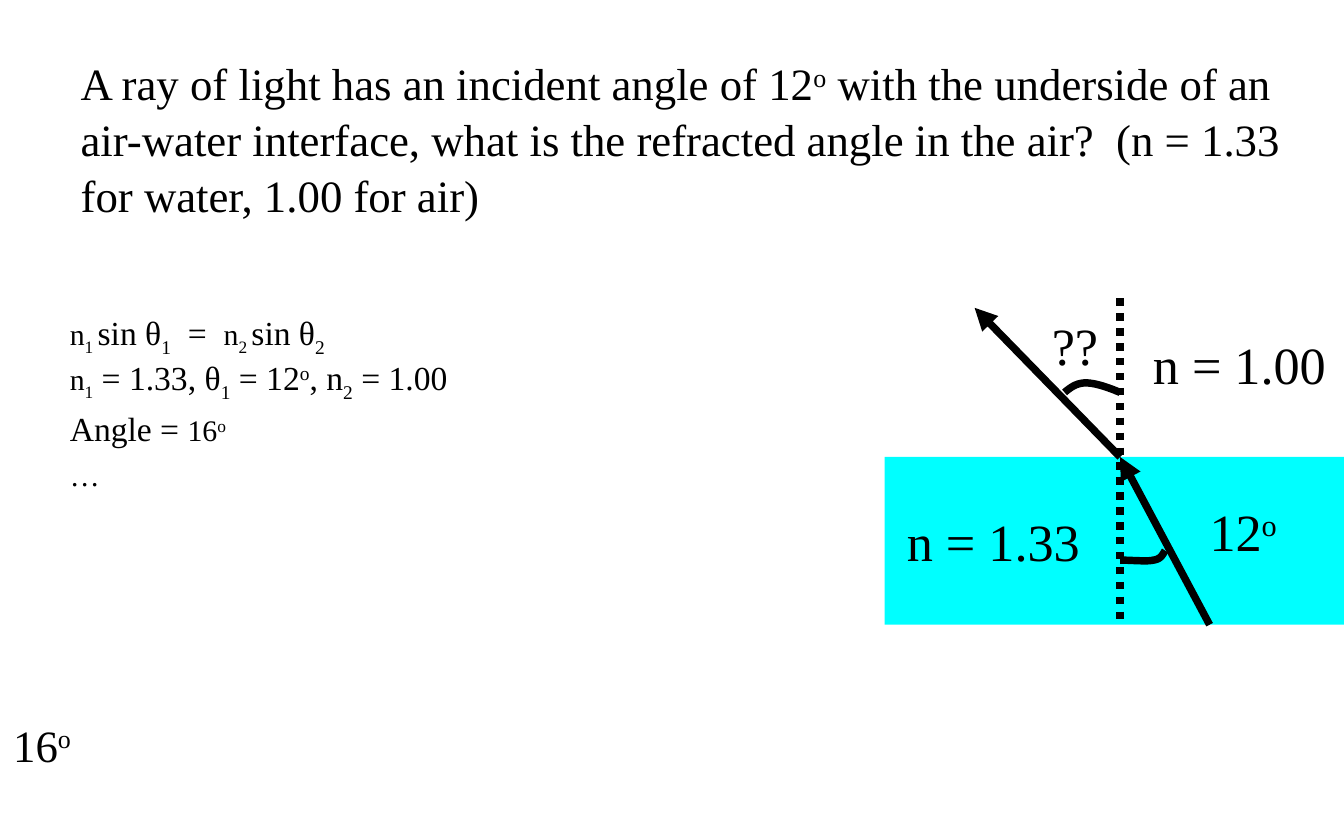
from lxml.etree import SubElement
from pptx import Presentation
from pptx.dml.color import RGBColor
from pptx.enum.dml import MSO_LINE
from pptx.enum.shapes import MSO_CONNECTOR, MSO_SHAPE
from pptx.enum.text import MSO_ANCHOR, MSO_AUTO_SIZE, PP_ALIGN
from pptx.oxml.ns import qn
from pptx.util import Cm, Pt

INK = RGBColor(0x00, 0x00, 0x00)
WATER = RGBColor(0x00, 0xFF, 0xFF)
FONT = "Times New Roman"
SUB, SUPER = -25, 30
STROKE = Pt(4)
LABEL_HEIGHT = 1.45


def write_runs(paragraph, runs):
    """Add (text, size, baseline percent) runs to a paragraph."""
    paragraph.alignment = PP_ALIGN.LEFT
    for text, size, baseline in runs:
        run = paragraph.add_run()
        run.text = text
        run.font.name = FONT
        run.font.size = Pt(size)
        run.font.color.rgb = INK
        if baseline:
            run.font._element.set("baseline", str(baseline * 1000))


def add_label(slide, left, top, width, height, runs):
    """Place a one-line label that does not wrap."""
    label = slide.shapes.add_textbox(Cm(left), Cm(top), Cm(width), Cm(height))
    label.text_frame.word_wrap = False
    write_runs(label.text_frame.paragraphs[0], runs)


def style_stroke(shape):
    """Give a line or curve the thick black stroke without a shadow."""
    shape.line.color.rgb = INK
    shape.line.width = STROKE


def add_line(slide, start, end, arrow=False, dash=None):
    """Draw a straight line between two points in centimetres."""
    line = slide.shapes.add_connector(
        MSO_CONNECTOR.STRAIGHT, *(Cm(value) for value in (*start, *end)))
    style_stroke(line)
    if dash:
        line.line.dash_style = dash
    if arrow:
        SubElement(line.line._get_or_add_ln(), qn("a:tailEnd"), type="triangle")
    SubElement(line._element.spPr, qn("a:effectLst"))


def bezier_points(controls, steps=12):
    """Sample a cubic curve given by its four control points."""
    for step in range(steps + 1):
        t = step / steps
        weights = ((1 - t) ** 3, 3 * t * (1 - t) ** 2, 3 * t * t * (1 - t), t ** 3)
        yield tuple(sum(w * point[axis] for w, point in zip(weights, controls))
                    for axis in (0, 1))


def add_angle_arc(slide, left, top, controls):
    """Draw an open arc from two joined cubic curves."""
    points = [*bezier_points(controls[:4]), *list(bezier_points(controls[3:]))[1:]]
    emu = [(Cm(left + x), Cm(top + y)) for x, y in points]
    builder = slide.shapes.build_freeform(*emu[0])
    builder.add_line_segments(emu[1:], close=False)
    arc = builder.convert_to_shape()
    arc.shadow.inherit = False
    arc.fill.background()
    style_stroke(arc)


def add_question(slide, left, top, width, height):
    """Write the problem statement in the title placeholder."""
    question = slide.shapes.title
    question.left, question.top = Cm(left), Cm(top)
    question.width, question.height = Cm(width), Cm(height)
    frame = question.text_frame
    frame.word_wrap = True
    frame.auto_size = MSO_AUTO_SIZE.NONE
    frame.vertical_anchor = MSO_ANCHOR.TOP
    paragraph = frame.paragraphs[0]
    paragraph.line_spacing = 1.04
    write_runs(paragraph, [
        ("A ray of light has an incident angle of 12", 24, 0),
        ("o", 24, SUPER),
        (" with the underside of an air-water interface, what is the refracted "
         "angle in the air?  (n = 1.33 for water, 1.00 for air)", 24, 0)])


def add_solution(slide, left, top, width, height):
    """Write the steps of the solution."""
    steps = [
        [("n", 16, 0), ("1 ", 16, SUB), ("sin θ", 18, 0), ("1", 18, SUB),
         ("  =  ", 18, 0), ("n", 16, 0), ("2 ", 16, SUB), ("sin θ", 18, 0),
         ("2", 18, SUB)],
        [("n", 16, 0), ("1", 16, SUB), (" = 1.33, θ", 18, 0), ("1", 18, SUB),
         (" = 12", 18, 0), ("o", 18, SUPER), (", n", 18, 0), ("2", 18, SUB),
         (" = 1.00", 18, 0)],
        [("Angle = ", 18, 0), ("16", 16, 0), ("o", 16, SUPER)],
        [("…", 16, 0)],
    ]
    frame = slide.shapes.add_textbox(
        Cm(left), Cm(top), Cm(width), Cm(height)).text_frame
    frame.word_wrap = True
    for index, runs in enumerate(steps):
        paragraph = frame.add_paragraph() if index else frame.paragraphs[0]
        paragraph.line_spacing = Pt(24)
        write_runs(paragraph, runs)


def add_refraction_diagram(slide, left, top, width, height):
    """Draw the water, the normal, both rays, their angles and labels."""
    surface = top + 3
    normal = left + 4.45
    bottom = top + height
    water = slide.shapes.add_shape(
        MSO_SHAPE.RECTANGLE, Cm(left), Cm(surface), Cm(width), Cm(bottom - surface))
    water.shadow.inherit = False
    water.fill.solid()
    water.fill.fore_color.rgb = WATER
    water.line.fill.background()

    crossing = (normal, surface)
    add_line(slide, (normal, top), (normal, bottom), dash=MSO_LINE.ROUND_DOT)
    add_line(slide, (left + 6.14, bottom), crossing, arrow=True)
    add_line(slide, crossing, (left + 1.7, top + 0.18), arrow=True)

    add_angle_arc(slide, left, top, [
        (5.3, 4.77), (5.25, 4.85), (5.22, 4.93), (5.08, 4.95),
        (4.95, 4.98), (4.69, 4.95), (4.45, 4.95)])
    add_angle_arc(slide, left, top, [
        (3.4, 1.78), (3.52, 1.68), (3.63, 1.6), (3.8, 1.6),
        (3.98, 1.6), (4.21, 1.68), (4.45, 1.78)])

    for x, y, label_width, runs in [
        (2.91, 0.15, 1.4, [("??", 28, 0)]),
        (5.89, 3.68, 1.85, [("12", 28, 0), ("o", 28, SUPER)]),
        (0.17, 3.86, 3.81, [("n = 1.33", 28, 0)]),
        (4.82, 0.51, 3.81, [("n = 1.00", 28, 0)]),
    ]:
        add_label(slide, left + x, top + y, label_width, LABEL_HEIGHT, runs)


def main():
    """Build the refraction slide and save it."""
    deck = Presentation()
    deck.slide_width, deck.slide_height = Cm(25.4), Cm(15.88)
    slide = deck.slides.add_slide(deck.slide_layouts[5])
    add_solution(slide, 1.07, 5.8, 13.77, 3.4)
    add_question(slide, 1.27, 0.89, 23.5, 3.33)
    add_refraction_diagram(slide, 16.72, 5.64, 8.68, 6.17)
    add_label(slide, 0, 13.44, 1.65, 1.3, [("16", 24, 0), ("o", 24, SUPER)])
    deck.save("out.pptx")


if __name__ == "__main__":
    main()
